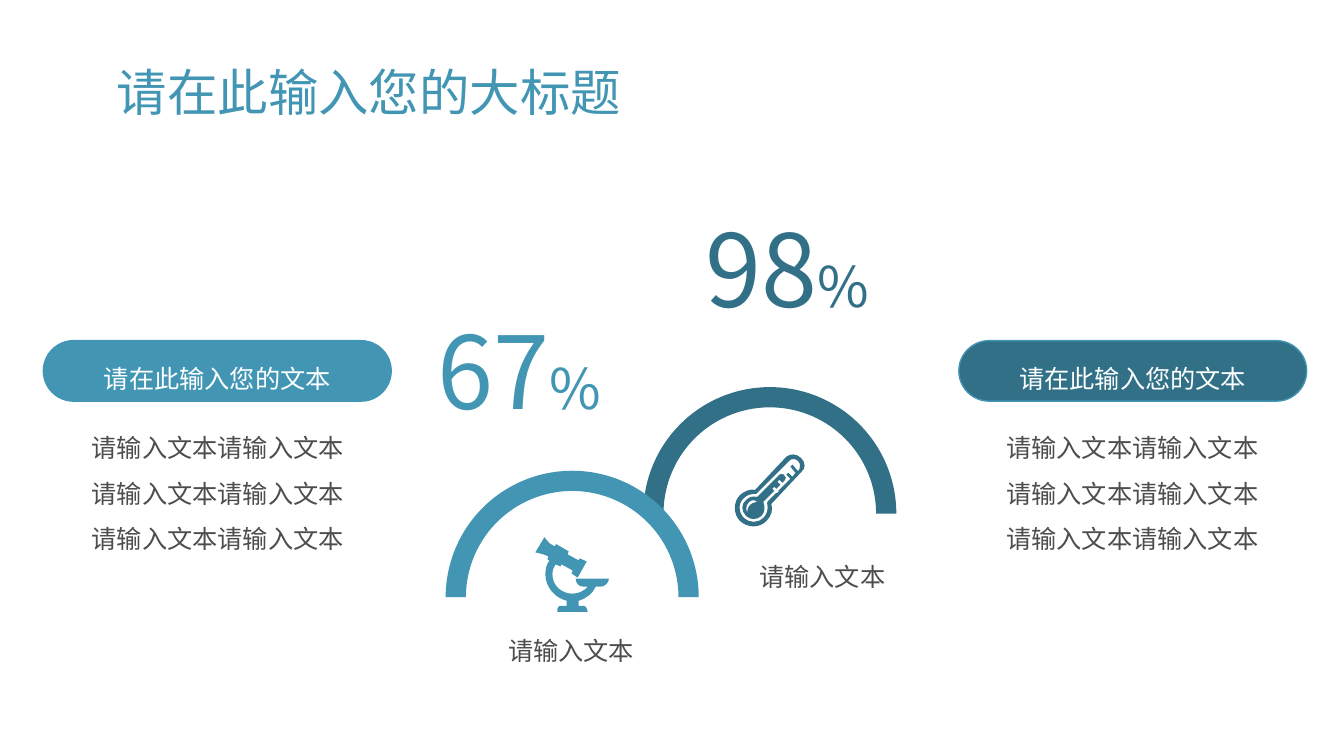
import lxml.etree
import pptx
import pptx.dml.color
import pptx.enum.shapes
import pptx.enum.text
import pptx.oxml.ns
import pptx.util

PX = 9144
THEME = {
    "font": "Noto Sans CJK SC",
    "light": "4296B4",
    "dark": "327087",
    "body": "4D4D4D",
    "on_pill": "FEFFFF",
    "title_size": 36,
    "text_size": 18,
    "number_size": 72,
    "percent_size": 40,
}
SHAPE = pptx.enum.shapes.MSO_SHAPE
ALIGN = pptx.enum.text.PP_ALIGN
ANCHOR = pptx.enum.text.MSO_ANCHOR


def fill_text(shape, runs, color, spacing=None, align=ALIGN.CENTER, anchor=ANCHOR.MIDDLE):
    frame = shape.text_frame
    frame.word_wrap = True
    frame.vertical_anchor = anchor
    paragraph = frame.paragraphs[0]
    paragraph.alignment = align
    paragraph.line_spacing = spacing
    for text, size in runs:
        run = paragraph.add_run()
        run.text = text
        run.font.size = pptx.util.Pt(size)
        run.font.name = THEME["font"]
        run.font.color.rgb = pptx.dml.color.RGBColor.from_string(THEME[color])
        east_asian = lxml.etree.SubElement(run._r.get_or_add_rPr(), pptx.oxml.ns.qn("a:ea"))
        east_asian.set("typeface", THEME["font"])


def add_outline(shapes, contours):
    builder = shapes.build_freeform(*contours[0][0], scale=PX)
    for contour in contours:
        if contour is not contours[0]:
            builder.move_to(*contour[0])
        builder.add_line_segments([segment[-2:] for segment in contour[1:]])
    shape = builder.convert_to_shape()
    left, top = round(shape.left / PX), round(shape.top / PX)
    segments = [segment for contour in contours for segment in contour[1:]]
    for line, segment in zip(shape._element.xpath(".//a:lnTo"), segments):
        if len(segment) == 6:
            line.tag = pptx.oxml.ns.qn("a:cubicBezTo")
            line.remove(line[0])
            for x, y in zip(segment[::2], segment[1::2]):
                point = lxml.etree.SubElement(line, pptx.oxml.ns.qn("a:pt"))
                point.set("x", str(x - left))
                point.set("y", str(y - top))
    return shape


THERMOMETER = [
    [(795, 468), (765, 500), (767, 506, 765, 512, 760, 517), (753, 524, 742, 524, 734, 517),
     (727, 510, 727, 498, 734, 491), (739, 487, 744, 485, 749, 486), (780, 453),
     (784, 450, 790, 450, 794, 454), (795, 455), (799, 459, 799, 465, 795, 468)],
    [(792, 458), (791, 457), (789, 455, 785, 455, 783, 457), (752, 488),
     (752, 490, 749, 490, 749, 490), (745, 490, 741, 491, 738, 494),
     (732, 499, 732, 508, 738, 514), (743, 519, 752, 519, 757, 514),
     (761, 510, 762, 505, 761, 500), (761, 500, 760, 498, 762, 497),
     (770, 489), (771, 489), (773, 487), (772, 487), (776, 483), (778, 481), (784, 475),
     (780, 471), (782, 469), (786, 473), (789, 469), (784, 463), (786, 461), (791, 467),
     (792, 467), (794, 464, 794, 460, 792, 458)],
    [(776, 479), (773, 476), (771, 478), (774, 481), (770, 485), (768, 483), (766, 485),
     (768, 487), (757, 498), (759, 503, 759, 508, 755, 512), (751, 516, 744, 516, 740, 512),
     (735, 507, 735, 500, 740, 496), (743, 493, 747, 492, 751, 493), (773, 471),
     (774, 470, 776, 470, 778, 471), (778, 472), (780, 473, 780, 475, 778, 477)],
    [(743, 498), (738, 502, 741, 509, 741, 508), (742, 498, 751, 498, 751, 498),
     (751, 498, 747, 494, 743, 498)],
]
MICROSCOPE = [
    [(567, 569), (568, 566), (557, 560), (556, 562), (551, 560),
     (549, 563, 548, 566, 548, 570), (548, 581, 557, 589, 568, 589),
     (574, 589, 580, 586, 583, 582), (578, 582), (574, 582, 571, 578, 571, 574), (604, 574),
     (604, 578, 600, 582, 596, 582), (591, 582), (588, 589, 581, 594, 574, 596), (574, 601),
     (579, 601), (582, 601, 583, 607, 583, 607), (553, 607), (553, 607, 552, 601, 556, 601),
     (562, 601), (562, 596), (550, 593, 541, 582, 541, 570), (541, 565, 542, 560, 545, 556),
     (543, 555), (544, 552), (539, 550), (531, 548), (540, 533), (545, 539), (550, 542),
     (552, 540), (564, 547), (563, 550), (574, 556), (575, 554), (582, 557), (573, 573)],
]
GAUGES = [
    ("98", "dark", THERMOMETER, (638, 384), (659, 205, 244, 121), (692, 533)),
    ("67", "light", MICROSCOPE, (442, 467), (393, 306, 244, 133), (443, 607)),
]
PANELS = [(43, 78, "light"), (951, 985, "dark")]

presentation = pptx.Presentation()
presentation.slide_width = 1333 * PX
presentation.slide_height = 750 * PX
slide = presentation.slides.add_slide(presentation.slide_layouts[6])
shapes = slide.shapes

title = shapes.add_textbox(106 * PX, 48 * PX, 1059 * PX, 92 * PX)
fill_text(title, [("请在此输入您的大标题", THEME["title_size"])], "light", 0.9, ALIGN.LEFT)

for number, color, icon, arc_corner, number_box, label_corner in GAUGES:
    arc = shapes.add_shape(SHAPE.BLOCK_ARC, *(length * PX for length in (*arc_corner, 251, 251)))
    for index, value in enumerate((108, 0, 0.08)):
        arc.adjustments[index] = value

    for shape in (arc, add_outline(shapes, icon)):
        shape.shadow.inherit = False
        shape.fill.solid()
        shape.fill.fore_color.rgb = pptx.dml.color.RGBColor.from_string(THEME[color])
        shape.line.fill.background()

    figure = shapes.add_textbox(*(length * PX for length in number_box))
    frame = figure.text_frame
    frame.margin_left = frame.margin_right = frame.margin_top = frame.margin_bottom = 0
    frame.auto_size = pptx.enum.text.MSO_AUTO_SIZE.SHAPE_TO_FIT_TEXT
    runs = [(number, THEME["number_size"]), ("%", THEME["percent_size"])]
    fill_text(figure, runs, color, anchor=ANCHOR.TOP)

    label = shapes.add_textbox(*(length * PX for length in (*label_corner, 247, 62)))
    fill_text(label, [("请输入文本", THEME["text_size"])], "body", 1.5)

for pill_left, body_left, color in PANELS:
    pill = shapes.add_shape(SHAPE.ROUNDED_RECTANGLE, pill_left * PX, 338 * PX, 345 * PX, 60 * PX)
    pill.adjustments[0] = 0.5
    pill.shadow.inherit = False
    pill.fill.solid()
    pill.fill.fore_color.rgb = pptx.dml.color.RGBColor.from_string(THEME[color])
    pill.line.color.rgb = pptx.dml.color.RGBColor.from_string(THEME["light"])
    pill.line.width = pptx.util.Pt(1)
    fill_text(pill, [("请在此输入您的文本", THEME["text_size"])], "on_pill", 1.5)

    body = shapes.add_textbox(body_left * PX, 407 * PX, 276 * PX, 149 * PX)
    fill_text(body, [("请输入文本" * 6, THEME["text_size"])], "body", 1.5)

presentation.save("out.pptx")
